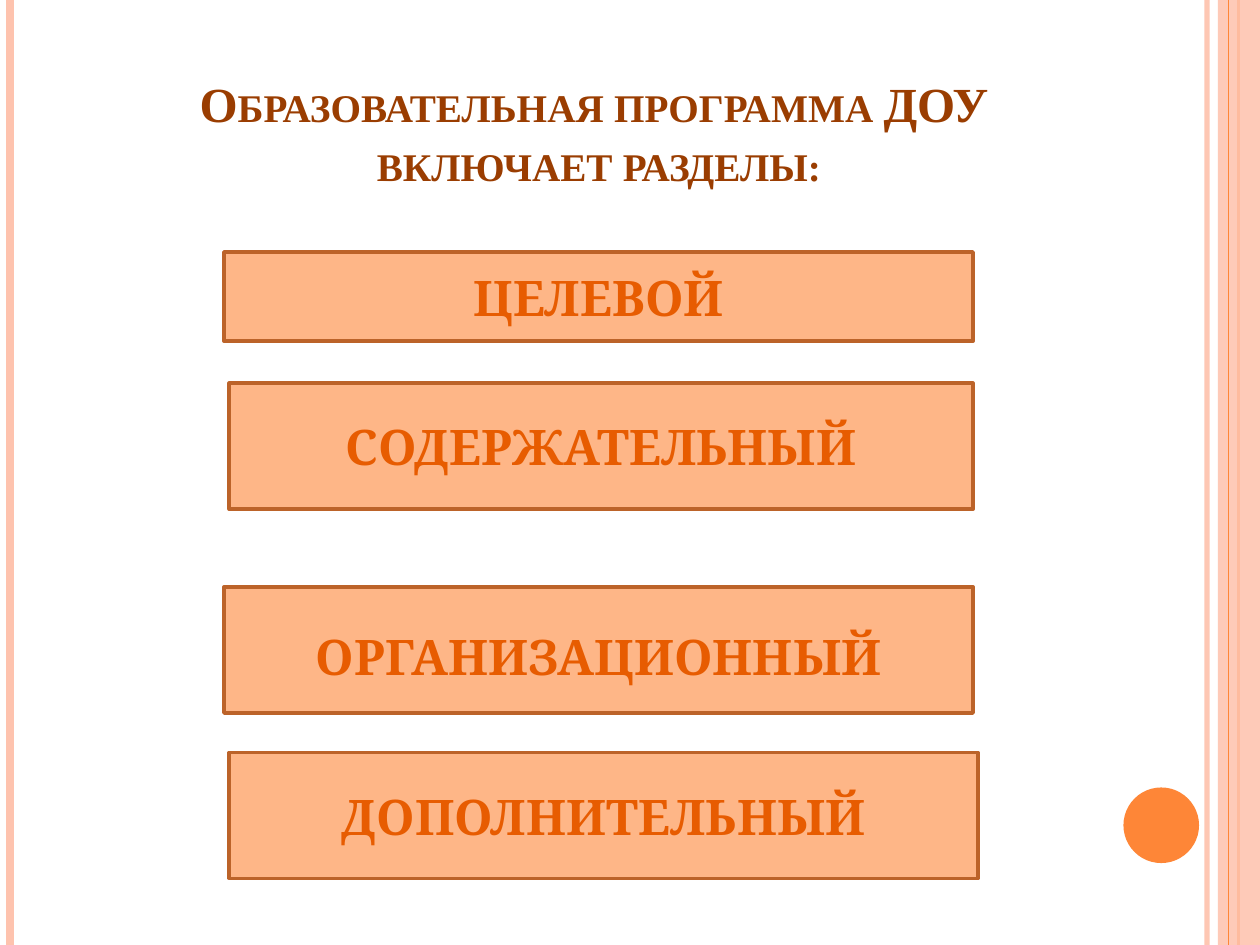
"""Build a slide that lists the sections of a preschool programme."""
from lxml.etree import SubElement
from pptx import Presentation
from pptx.dml.color import RGBColor
from pptx.enum.shapes import MSO_CONNECTOR as Conn, MSO_SHAPE as Kind
from pptx.enum.text import MSO_ANCHOR as Anchor, PP_ALIGN as Align
from pptx.oxml.ns import qn
from pptx.util import Pt

WIDTH, HEIGHT = 720, 540
PEACH, ORANGE = "FEC3AE", "FE8637"
TITLE = "Образовательная программа ДОУ \vвключает разделы:"
BOXES = [
    ("ЦЕЛЕВОЙ", 128, 144, 428, 51, 0),
    ("СОДЕРЖАТЕЛЬНЫЙ", 131, 219, 425, 72, 0),
    ("ОРГАНИЗАЦИОННЫЙ", 128, 335.5, 428, 72, 7),
    ("ДОПОЛНИТЕЛЬНЫЙ", 131, 430, 428, 72, 0),
]
BACK = [(689.8, PEACH, 3, 93), (5.8, PEACH, 4.5, 100), (707.8, ORANGE, 1.5, 100)]
FRONT = [(702, ORANGE, 0.75, 100)]


def paint(fmt, color, alpha=100):
    fmt.solid()
    fmt.fore_color.rgb = RGBColor.from_string(color)
    if alpha < 100:
        clr = fmt._xPr.find(".//" + qn("a:srgbClr"))
        SubElement(clr, qn("a:alpha"), val=str(alpha * 1000))


def style(par, face, color):
    par.alignment = Align.CENTER
    font = par.font
    font.name, font.size, font.bold = face, Pt(28), True
    paint(font.fill, color)


def stripe(slide, x, color, width, alpha):
    line = slide.shapes.add_connector(Conn.STRAIGHT, Pt(x), 0, Pt(x), Pt(HEIGHT))
    paint(line.line.fill, color, alpha)
    line.line.width = Pt(width)
    SubElement(line._element.spPr, qn("a:effectLst"))


def block(slide, kind, area, color, alpha=100):
    shape = slide.shapes.add_shape(kind, *map(Pt, area))
    shape.shadow.inherit = False
    paint(shape.fill, color, alpha)
    shape.line.fill.background()
    return shape


def head(slide):
    title = slide.shapes.title
    title.left, title.top, title.width, title.height = map(Pt, (61, 23, 562.5, 90))
    frame = title.text_frame
    frame.text = TITLE
    frame.vertical_anchor = Anchor.BOTTOM
    par = frame.paragraphs[0]
    style(par, "Times New Roman", "9A3D01")
    par.font._element.set("cap", "small")


def section(slide, text, x, y, w, h, drop):
    box = block(slide, Kind.RECTANGLE, (x, y, w, h), "FEB687")
    paint(box.line.fill, "BC6329")
    box.line.width = Pt(2)
    frame = box.text_frame
    frame.text = text
    frame.word_wrap = True
    frame.vertical_anchor = Anchor.MIDDLE
    frame.margin_top = Pt(3.6 + drop)
    style(frame.paragraphs[0], "Cambria", "E75C01")


def main():
    deck = Presentation()
    deck.slide_width, deck.slide_height = Pt(WIDTH), Pt(HEIGHT)
    slide = deck.slides.add_slide(deck.slide_layouts[5])
    for row in BACK:
        stripe(slide, *row)
    block(slide, Kind.RECTANGLE, (696, 0, 24, HEIGHT), PEACH, 87)
    for row in FRONT:
        stripe(slide, *row)
    block(slide, Kind.OVAL, (642, 450, 43.2, 43.2), ORANGE)
    head(slide)
    for row in BOXES:
        section(slide, *row)
    deck.save("out.pptx")


if __name__ == "__main__":
    main()
